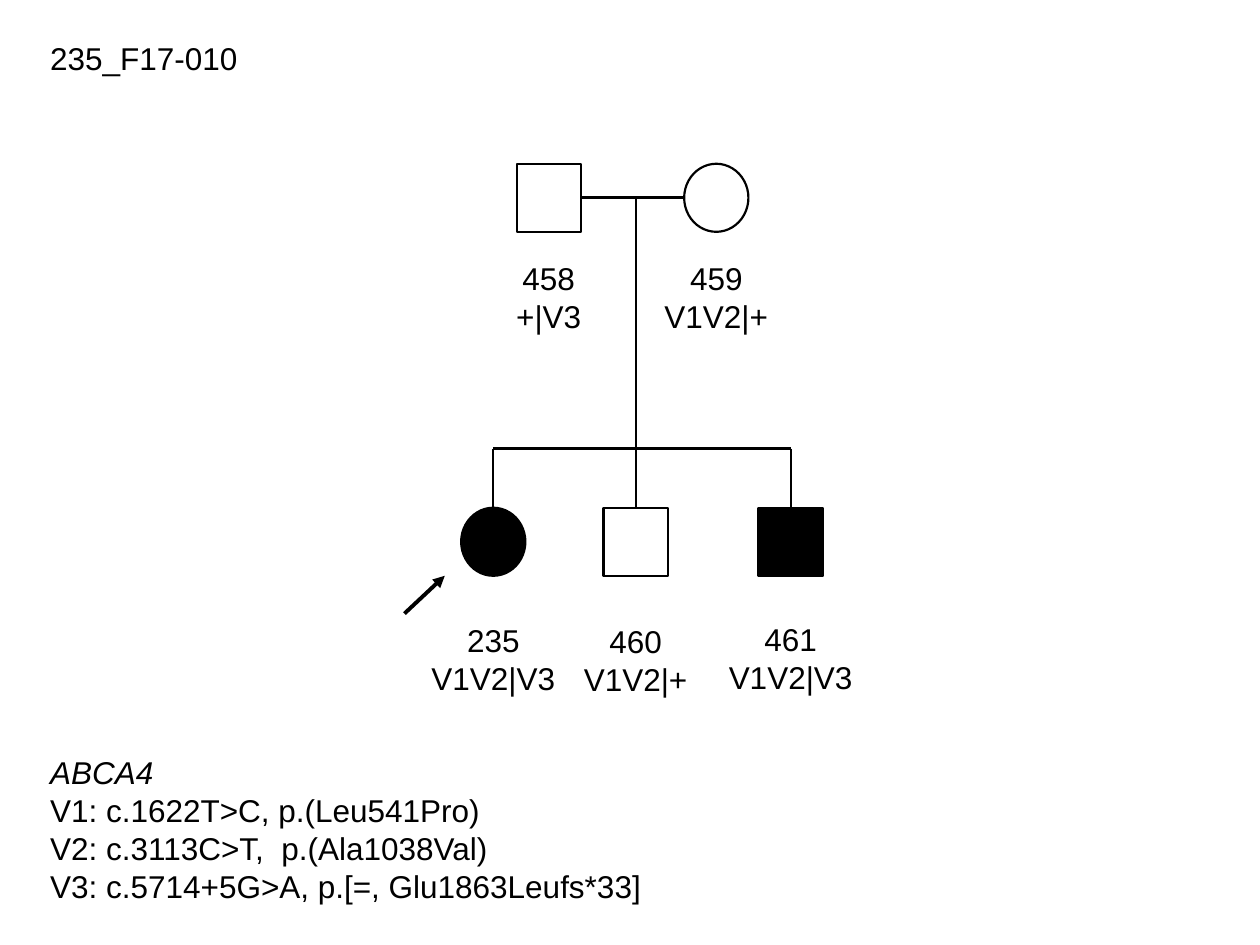
"""Build a family pedigree slide with genotypes and a variant key."""
from lxml import etree
from pptx import Presentation
from pptx.dml.color import RGBColor
from pptx.enum import shapes, text
from pptx.oxml import ns
from pptx.util import Inches, Pt

THEME = {
    "font": "Arial", "size": Pt(18),
    "ink": RGBColor(0, 0, 0), "paper": RGBColor(255, 255, 255),
    "thin": 1.25, "mate": 1.5, "arrow": 2.25,
}
TITLE = "235_F17-010"
GENE = "ABCA4"
KEY = [
    "V1: c.1622T>C, p.(Leu541Pro)",
    "V2: c.3113C>T,  p.(Ala1038Val)",
    "V3: c.5714+5G>A, p.[=, Glu1863Leufs*33]",
]
# id: genotype, sex, affected, left, top, label top, label width
FAMILY = {
    "458": ("+|V3", "male", False, 4.1, 1.3, 2.01, 0.72),
    "459": ("V1V2|+", "female", False, 5.43, 1.3, 2.01, 1.03),
    "235": ("V1V2|V3", "female", True, 3.66, 4.03, 4.88, 1.19),
    "460": ("V1V2|+", "male", False, 4.79, 4.03, 4.89, 1.03),
    "461": ("V1V2|V3", "male", True, 6.02, 4.03, 4.87, 1.19),
}
SIZE = (0.51, 0.54)
FORMS = {"male": shapes.MSO_SHAPE.RECTANGLE, "female": shapes.MSO_SHAPE.OVAL}
MATE, BAR = 1.57, 3.56


def write(slide, lines, box, wrap=False, align=text.PP_ALIGN.LEFT):
    area = slide.shapes.add_textbox(*map(Inches, box))
    frame = area.text_frame
    frame.text = "\n".join(lines)
    frame.word_wrap = wrap
    frame.auto_size = text.MSO_AUTO_SIZE.SHAPE_TO_FIT_TEXT
    for para in frame.paragraphs:
        para.alignment = align
        for run in para.runs:
            run.font.name = THEME["font"]
            run.font.size = THEME["size"]
            run.font.color.rgb = THEME["ink"]
    return frame


def join(slide, start, end, width="thin"):
    line = slide.shapes.add_connector(
        shapes.MSO_CONNECTOR.STRAIGHT, *map(Inches, (*start, *end)))
    line.line.color.rgb = THEME["ink"]
    line.line.width = Pt(THEME[width])
    etree.SubElement(line._element.spPr, ns.qn("a:effectLst"))
    return line


def person(slide, name, geno, sex, ill, left, top, low, wide):
    mark = slide.shapes.add_shape(
        FORMS[sex], *map(Inches, (left, top, *SIZE)))
    mark.shadow.inherit = False
    mark.fill.solid()
    mark.fill.fore_color.rgb = THEME["ink" if ill else "paper"]
    mark.line.color.rgb = THEME["ink"]
    mark.line.width = Pt(THEME["thin"])
    box = (left + SIZE[0] / 2 - wide / 2, low, wide, 0.71)
    write(slide, [name, geno], box, align=text.PP_ALIGN.CENTER)
    return mark


def main():
    deck = Presentation()
    deck.slide_width, deck.slide_height = Inches(10), Inches(7.5)
    slide = deck.slides.add_slide(deck.slide_layouts[6])

    write(slide, [TITLE], (0.3, 0.26, 1.7, 0.4))
    key = write(slide, [GENE, *KEY], (0.3, 5.93, 7.36, 1.31), wrap=True)
    key.paragraphs[0].runs[0].font.italic = True

    marks = {name: person(slide, name, *data)
             for name, data in FAMILY.items()}
    mid = {name: data[3] + SIZE[0] / 2 for name, data in FAMILY.items()}

    mate = join(slide, (5.43, MATE), (4.61, MATE), "mate")
    mate.end_connect(marks["458"], 3)
    join(slide, (mid["235"], BAR), (mid["461"], BAR))
    for name, high in (("235", BAR), ("460", MATE), ("461", BAR)):
        drop = join(slide, (mid[name], high), (mid[name], FAMILY[name][4]))
        if FAMILY[name][1] == "male":
            drop.end_connect(marks[name], 0)

    arrow = join(slide, (3.21, 4.87), (3.53, 4.57), "arrow")
    tip = etree.SubElement(arrow.line._get_or_add_ln(), ns.qn("a:tailEnd"))
    tip.set("type", "triangle")

    deck.save("out.pptx")


if __name__ == "__main__":
    main()
